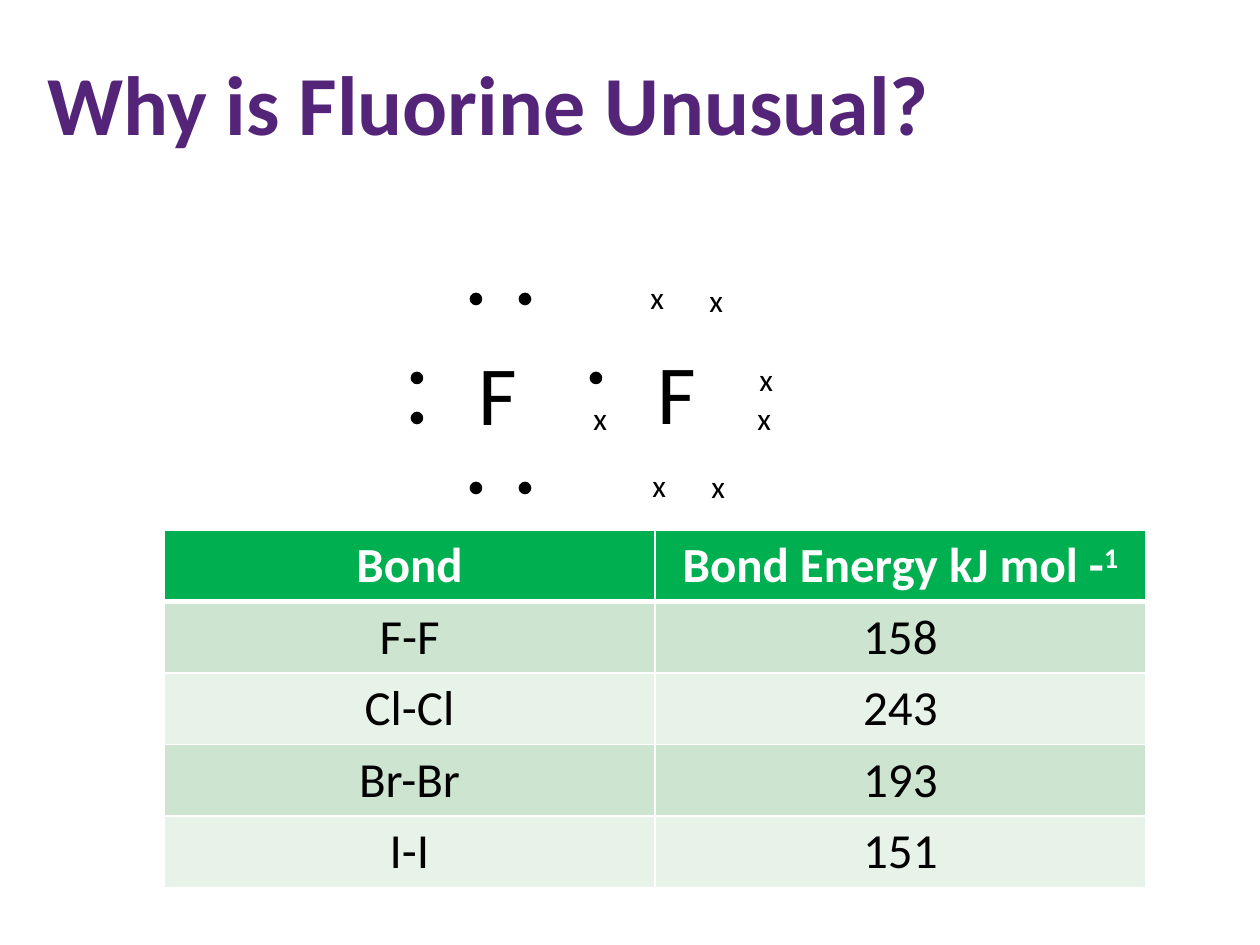
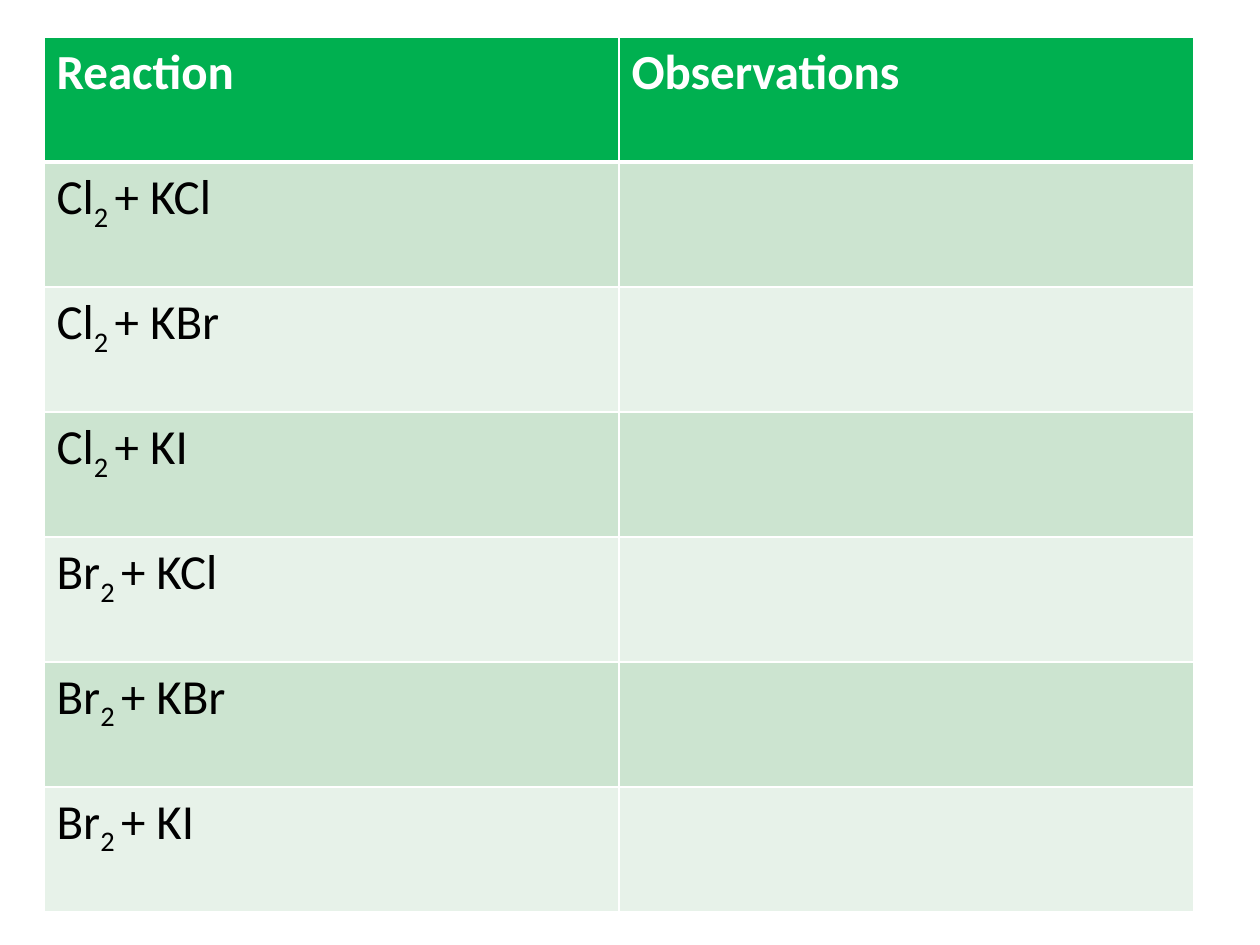
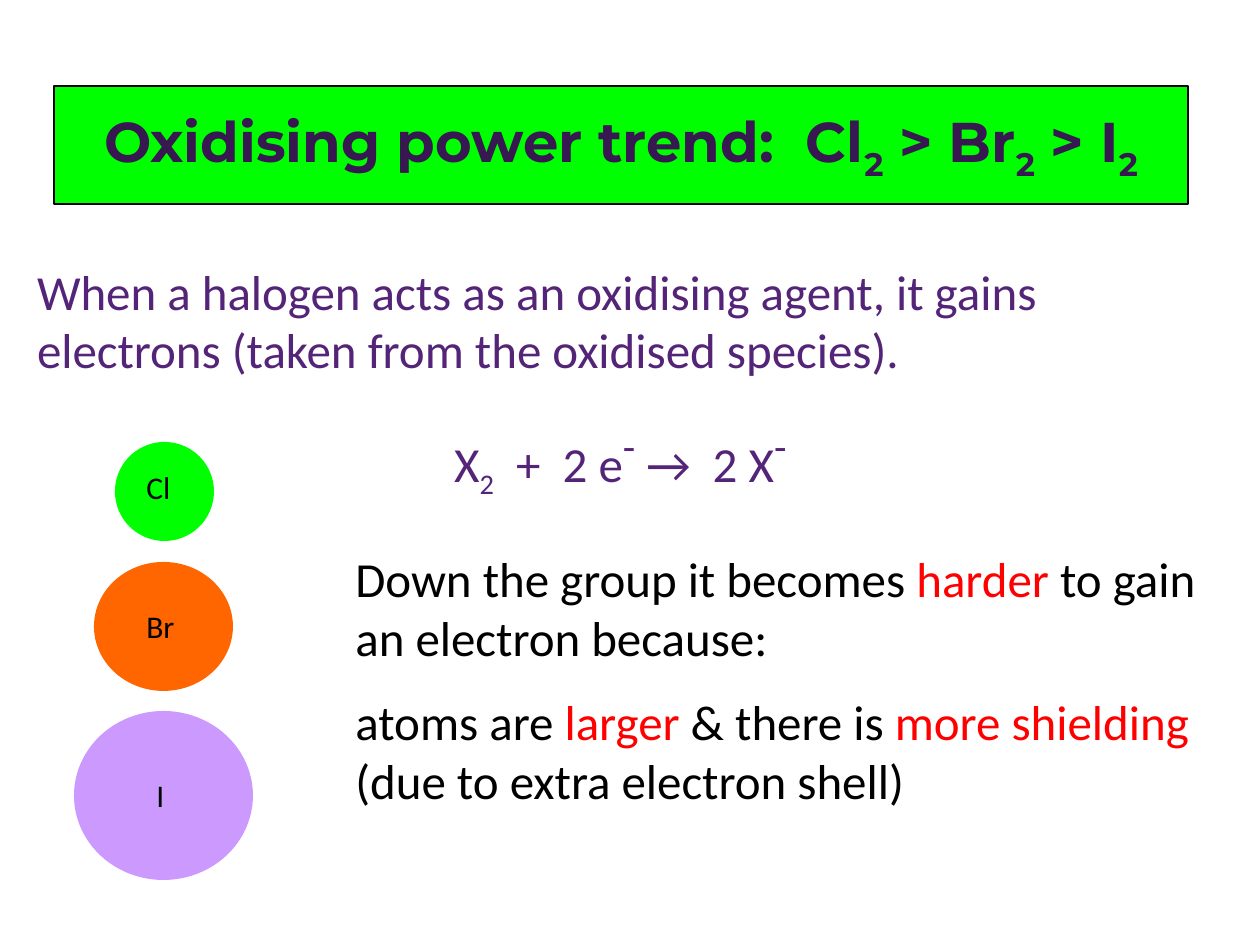
import itertools
import pptx
import pptx.dml.color
import pptx.enum.shapes
import pptx.enum.text
import pptx.oxml
import pptx.oxml.ns
import pptx.util

COLORS = {
    "black": "000000", "white": "FFFFFF", "purple": "542478", "plum": "381850",
    "header": "00B050", "band": "CCE4D0", "pale": "E7F2E9", "red": "FF0000",
    "chlorine": "00FF00", "bromine": "FF6600", "iodine": "CC99FF",
}
BASELINES = {"sub": "-25000", "sup": "30000"}
CENTER = pptx.enum.text.PP_ALIGN.CENTER
LEFT = pptx.enum.text.PP_ALIGN.LEFT
SHAPES = pptx.enum.shapes.MSO_SHAPE

FLUORINE_TITLE = "Why is Fluorine Unusual?"
ATOMS = [(466, 335), (645, 334)]
DOTS = [(x, y) for x in (471, 520) for y in (294, 483)] + [(412, 373), (412, 413), (591, 373)]
CROSSES = [(581, 393), (745, 393), (747, 354), (638, 272), (697, 275), (640, 460), (699, 461)]
BOND_ROWS = [
    [[("Bond",)], [("Bond Energy kJ mol -",), ("1", "sup")]],
    [[("F-F",)], [("158",)]],
    [[("Cl-Cl",)], [("243",)]],
    [[("Br-Br",)], [("193",)]],
    [[("I-I",)], [("151",)]],
]

HALOGENS = ["Cl", "Br"]
SALTS = ["KCl", "KBr", "KI"]
REACTION_ROWS = [[[("Reaction",)], [("Observations",)]]] + [
    [[(halogen,), ("2 ", "sub"), (f"+ {salt}",)], []]
    for halogen, salt in itertools.product(HALOGENS, SALTS)
]

TREND_TITLE = [("Oxidising power trend:  Cl",), ("2", "sub"), (" > Br",), ("2", "sub"),
               (" > I",), ("2", "sub")]
AGENT_TEXT = [("When a halogen acts as an oxidising agent, it gains electrons "
               "(taken from the oxidised species).",)]
HALF_EQUATION = [("X",), ("2", "sub"), ("  +  2 e",), ("-", "sup", 40), (" →  2 X",),
                 ("-", "sup", 40)]
HARDER_TEXT = [("Down the group it becomes ",), ("harder", "red"),
               (" to gain an electron because:",)]
REASON_TEXT = [("atoms are ",), ("larger", "red"), (" & there is ",),
               ("more shielding", "red"), (" (due to extra electron shell)",)]
HALOGEN_ATOMS = [
    ("Cl", "chlorine", (115, 442, 99, 99), (134, 462, 59, 50)),
    ("Br", "bromine", (94, 562, 139, 129), (134, 601, 83, 50)),
    ("I", "iodine", (74, 711, 179, 169), (144, 770, 49, 50)),
]


def px(length):
    return pptx.util.Emu(round(length * 914400 / 126))


def rgb(name):
    return pptx.dml.color.RGBColor.from_string(COLORS[name])


def write(para, spans, size, color="black", bold=False, font="Calibri", align=LEFT):
    para.alignment = align
    for text, style, span_size in [(*span, None, None)[:3] for span in spans]:
        span = para.add_run()
        span.text = text
        span.font.name = font
        span.font.size = pptx.util.Pt(span_size or size)
        span.font.bold = bold
        span.font.color.rgb = rgb("red" if style == "red" else color)
        if style in BASELINES:
            span.font._rPr.set("baseline", BASELINES[style])


def add_text(page, place, spans, size, **look):
    box = page.shapes.add_textbox(*map(px, place))
    box.text_frame.word_wrap = True
    write(box.text_frame.paragraphs[0], spans, size, **look)
    return box


def add_paragraph(box, spans, size, gap, **look):
    para = box.text_frame.add_paragraph()
    para.space_before = pptx.util.Pt(gap)
    write(para, spans, size, **look)


def add_filled(page, kind, place, color, line_width=0):
    shape = page.shapes.add_shape(kind, *map(px, place))
    shape.shadow.inherit = False
    shape.fill.solid()
    shape.fill.fore_color.rgb = rgb(color)
    if line_width:
        shape.line.color.rgb = rgb("black")
        shape.line.width = pptx.util.Pt(line_width)
    else:
        shape.line.fill.background()
    return shape


def add_border(cell, side, points):
    cell._tc.get_or_add_tcPr().append(pptx.oxml.parse_xml(
        f'<a:{side} {pptx.oxml.ns.nsdecls("a")} w="{points * 12700}"><a:solidFill>'
        f'<a:srgbClr val="{COLORS["white"]}"/></a:solidFill></a:{side}>'))


def add_grid(page, left, top, column_width, row_height, rows, align):
    columns = len(rows[0])
    place = (left, top, column_width * columns, row_height * len(rows))
    table = page.shapes.add_table(len(rows), columns, *map(px, place)).table
    for row_index, row in enumerate(rows):
        header = row_index == 0
        fill = "header" if header else ("pale", "band")[row_index % 2]
        for column_index, spans in enumerate(row):
            cell = table.cell(row_index, column_index)
            for side in ("lnL", "lnR", "lnT", "lnB"):
                thick = (header and side == "lnB") or (row_index == 1 and side == "lnT")
                add_border(cell, side, 3 if thick else 1)
            cell.fill.solid()
            cell.fill.fore_color.rgb = rgb(fill)
            write(cell.text_frame.paragraphs[0], spans, 28,
                  color="white" if header else "black", bold=header, align=align)


def build_fluorine(page):
    for x, y in ATOMS:
        add_text(page, (x, y, 94, 115), [("F",)], 48)
    for x, y in DOTS:
        add_filled(page, SHAPES.OVAL, (x, y, 10, 10), "black", 1.5)
    for x, y in CROSSES:
        add_text(page, (x, y, 92, 50), [("x",)], 18)
    add_grid(page, 164, 530, 491, 71, BOND_ROWS, CENTER)
    add_text(page, (35, 45, 1042, 115), [(FLUORINE_TITLE,)], 48, color="purple", bold=True)


def build_reactions(page):
    add_grid(page, 44, 37, 575, 125, REACTION_ROWS, LEFT)


def build_trend(page):
    banner = add_filled(page, SHAPES.RECTANGLE, (54, 86, 1134, 118), "chlorine", 0.75)
    banner.text_frame.word_wrap = True
    banner.text_frame.vertical_anchor = pptx.enum.text.MSO_ANCHOR.MIDDLE
    write(banner.text_frame.paragraphs[0], TREND_TITLE, 32, color="plum", bold=True,
          font="Montserrat", align=CENTER)

    agent = add_text(page, (0, 255, 1216, 242), AGENT_TEXT, 28, color="purple")
    agent.text_frame.margin_left = px(37)
    add_paragraph(agent, HALF_EQUATION, 28, 19, color="purple", align=CENTER)

    reasons = add_text(page, (343, 542, 883, 273), HARDER_TEXT, 28)
    add_paragraph(reasons, REASON_TEXT, 28, 14.6)

    for symbol, color, circle, label in HALOGEN_ATOMS:
        add_filled(page, SHAPES.OVAL, circle, color)
        add_text(page, label, [(symbol,)], 18)


def main():
    deck = pptx.Presentation()
    deck.slide_width, deck.slide_height = px(1260), px(945)
    for build in (build_fluorine, build_reactions, build_trend):
        build(deck.slides.add_slide(deck.slide_layouts[6]))
    deck.save("out.pptx")


if __name__ == "__main__":
    main()
